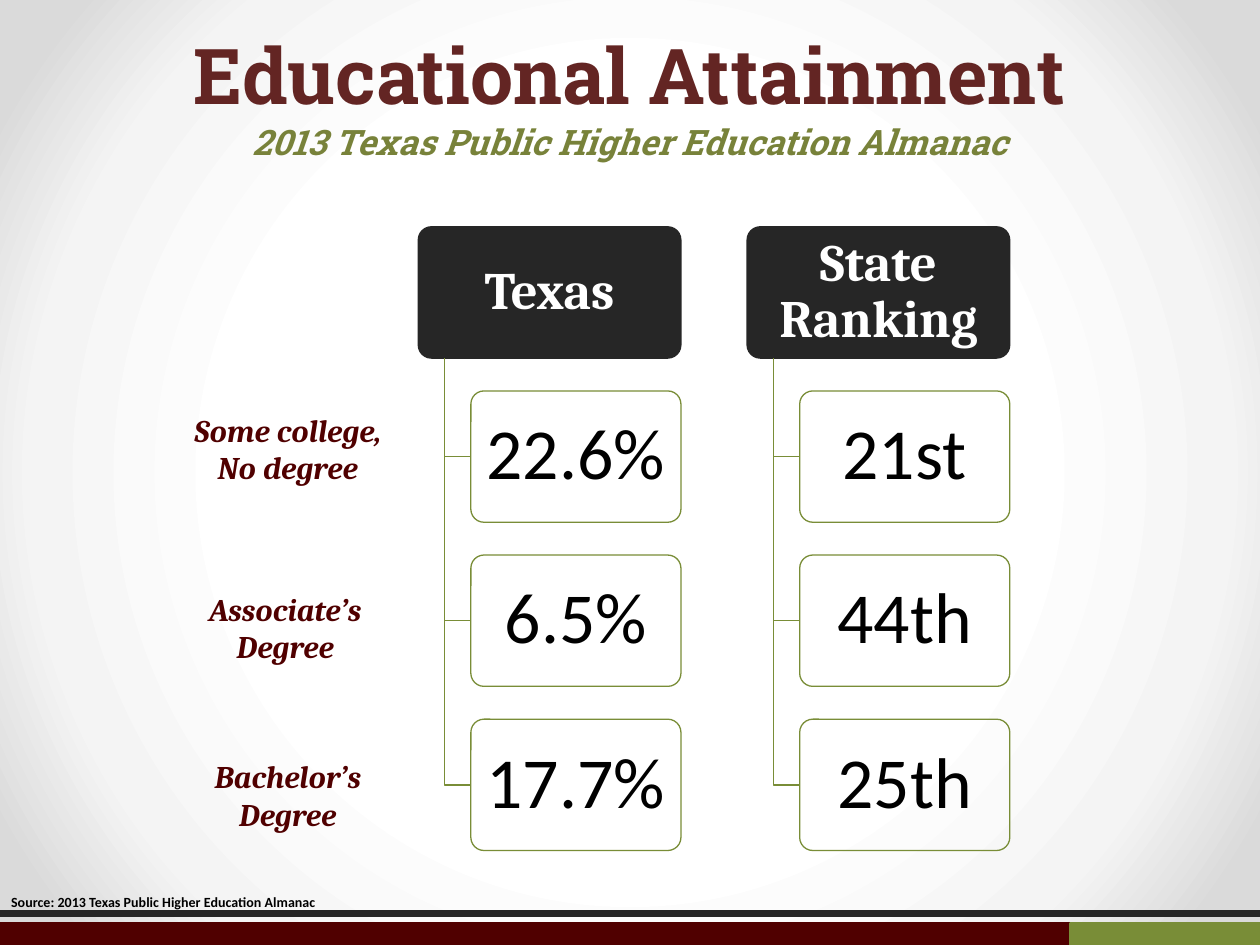
from lxml import etree
from pptx import Presentation
from pptx import util as u
from pptx.dml.color import RGBColor
from pptx.enum import shapes, text
from pptx.oxml import ns, parse_xml

COLORS = {
    "maroon": "500000", "title": "632523", "subtitle": "78823A", "green": "798D37",
    "charcoal": "262626", "white": "FFFFFF", "black": "000000",
}
BACKGROUND_STOPS = {50: "FFFFFF", 76: "F4F4F4", 92: "DADADA"}
TITLE_LINES = [
    ("Educational Attainment",
     {"name": "Roboto Slab", "size": u.Pt(44), "bold": True, "italic": False}, "title"),
    ("2013 Texas Public Higher Education Almanac",
     {"name": "Roboto Slab", "size": u.Pt(20), "bold": True, "italic": True}, "subtitle"),
]
HEADER_FONT = {"name": "Cambria", "size": u.Pt(30), "bold": True}
VALUE_FONT = {"name": "Calibri", "size": u.Pt(41), "bold": False}
LABEL_FONT = {"name": "Cambria", "size": u.Pt(18), "bold": True, "italic": True}
SOURCE_FONT = {"name": "Calibri", "size": u.Pt(8), "bold": True}
HEADER_MARGINS = {"margin_left": u.Inches(0.06), "margin_right": u.Inches(0.06),
                  "margin_top": u.Inches(0.04), "margin_bottom": u.Inches(0.04)}
VALUE_MARGINS = {"margin_left": u.Inches(0.09), "margin_right": u.Inches(0.09),
                 "margin_top": u.Inches(0.06), "margin_bottom": u.Inches(0.06)}
COLUMNS = {"Texas": ["22.6%", "6.5%", "17.7%"],
           "State Ranking": ["21st", "44th", "25th"]}
ROW_LABELS = [("Some college, No degree", 1.27, 3.21),
              ("Associate’s Degree", 1.25, 4.63),
              ("Bachelor’s Degree", 1.27, 5.96)]


def rgb(color):
    """Return the named colour."""
    return RGBColor.from_string(COLORS[color])


def apply_format(target, values):
    """Set every attribute in values on the target."""
    for name, value in values.items():
        setattr(target, name, value)


def write_paragraph(paragraph, words, font, color, **layout):
    """Fill a paragraph with one formatted run."""
    run = paragraph.add_run()
    run.text = words
    apply_format(run.font, font)
    run.font.color.rgb = rgb(color)
    apply_format(paragraph, layout)


def style_shape(shape, fill, line, width):
    """Give a shape its fill and outline without a shadow."""
    shape.shadow.inherit = False
    if fill:
        shape.fill.solid()
        shape.fill.fore_color.rgb = rgb(fill)
    else:
        shape.fill.background()
    shape.line.color.rgb = rgb(line)
    shape.line.width = u.Pt(width)


def paint_background(slide):
    """Fill the slide background with a radial gradient."""
    stops = "".join(
        f'<a:gs pos="{position * 1000}"><a:srgbClr val="{color}"/></a:gs>'
        for position, color in BACKGROUND_STOPS.items())
    slide.background.fill.gradient()
    gradient = next(slide.element.iter(ns.qn("a:gradFill")))
    gradient.getparent().replace(gradient, parse_xml(
        f'<a:gradFill {ns.nsdecls("a")} rotWithShape="1"><a:gsLst>{stops}</a:gsLst>'
        '<a:path path="circle"><a:fillToRect l="50000" t="50000" r="50000" b="50000"/>'
        '</a:path></a:gradFill>'))


def add_title(slide, left, top, width, height):
    """Place the title and its subtitle line."""
    title = slide.shapes.title
    apply_format(title, {"left": left, "top": top, "width": width, "height": height})
    frame = title.text_frame
    apply_format(frame, {"word_wrap": True, "vertical_anchor": text.MSO_ANCHOR.TOP,
                         "auto_size": text.MSO_AUTO_SIZE.SHAPE_TO_FIT_TEXT})
    for index, (words, font, color) in enumerate(TITLE_LINES):
        paragraph = frame.add_paragraph() if index else frame.paragraphs[0]
        write_paragraph(paragraph, words, font, color, alignment=text.PP_ALIGN.CENTER,
                        line_spacing=1.0, space_before=u.Pt(0))


def add_footer(slide, left, top, width, height):
    """Draw the rule, the maroon band and its green end block."""
    band_height = u.Inches(0.17)
    band_top = top + height - band_height
    block_width = u.Inches(1.5)
    rule = slide.shapes.add_connector(
        shapes.MSO_CONNECTOR.STRAIGHT, left + width, top, left, top)
    rule.line.color.rgb = rgb("charcoal")
    rule.line.width = u.Pt(4.5)
    etree.SubElement(rule.element.spPr, ns.qn("a:effectLst"))
    for start, span, color in [(left, width, "maroon"),
                               (left + width - block_width, block_width, "green")]:
        band = slide.shapes.add_shape(
            shapes.MSO_SHAPE.RECTANGLE, start, band_top, span, band_height)
        style_shape(band, color, color, 2)


def add_card(slide, box, words, font, color, fill, line, margins):
    """Draw one rounded card with centred text."""
    card = slide.shapes.add_shape(shapes.MSO_SHAPE.ROUNDED_RECTANGLE, *box)
    card.adjustments[0] = 0.1
    style_shape(card, fill, line, 0.75)
    frame = card.text_frame
    apply_format(frame, {"word_wrap": True,
                         "vertical_anchor": text.MSO_ANCHOR.MIDDLE, **margins})
    write_paragraph(frame.paragraphs[0], words, font, color,
                    alignment=text.PP_ALIGN.CENTER, line_spacing=0.9)


def add_elbow(slide, left, top, right, bottom):
    """Draw a branch that runs down and then right."""
    builder = slide.shapes.build_freeform(left, top)
    builder.add_line_segments([(left, bottom), (right, bottom)], close=False)
    style_shape(builder.convert_to_shape(), None, "green", 0.75)


def add_column(slide, left, top, height, header, values):
    """Draw a header card with its value cards branching below."""
    card_height = int(height / (1 + 1.25 * len(values)))
    width = 2 * card_height
    indent = width // 10
    add_card(slide, (left, top, width, card_height), header, HEADER_FONT,
             "white", "charcoal", "charcoal", HEADER_MARGINS)
    for row, value in enumerate(values, start=1):
        card_top = top + int(1.25 * card_height * row)
        card_left = left + 2 * indent
        add_elbow(slide, left + indent, top + card_height,
                  card_left, card_top + card_height // 2)
        add_card(slide, (card_left, card_top, width - 2 * indent, card_height), value,
                 VALUE_FONT, "black", None, "green", VALUE_MARGINS)


def add_caption(slide, left, top, width, height, words, font, color, alignment):
    """Place a wrapped text box with one paragraph."""
    frame = slide.shapes.add_textbox(left, top, width, height).text_frame
    apply_format(frame, {"word_wrap": True,
                         "auto_size": text.MSO_AUTO_SIZE.SHAPE_TO_FIT_TEXT})
    write_paragraph(frame.paragraphs[0], words, font, color, alignment=alignment)


def main():
    """Build and save the slide."""
    presentation = Presentation()
    presentation.slide_width = u.Inches(10)
    presentation.slide_height = u.Inches(7.5)
    slide = presentation.slides.add_slide(presentation.slide_layouts[5])
    paint_background(slide)
    add_title(slide, 0, u.Inches(0.17), u.Inches(10), u.Inches(1.18))
    add_footer(slide, 0, u.Inches(7.25), u.Inches(10), u.Inches(0.25))
    for index, (header, values) in enumerate(COLUMNS.items()):
        add_column(slide, u.Inches(3.32 + 2.61 * index), u.Inches(1.8),
                   u.Inches(4.95), header, values)
    for words, left, top in ROW_LABELS:
        add_caption(slide, u.Inches(left), u.Inches(top), u.Inches(2.03), u.Inches(0.71),
                    words, LABEL_FONT, "maroon", text.PP_ALIGN.CENTER)
    add_caption(slide, u.Inches(-0.01), u.Inches(7.04), u.Inches(4.44), u.Inches(0.24),
                "Source: 2013 Texas Public Higher Education Almanac",
                SOURCE_FONT, "black", text.PP_ALIGN.LEFT)
    presentation.save("out.pptx")


if __name__ == "__main__":
    main()
